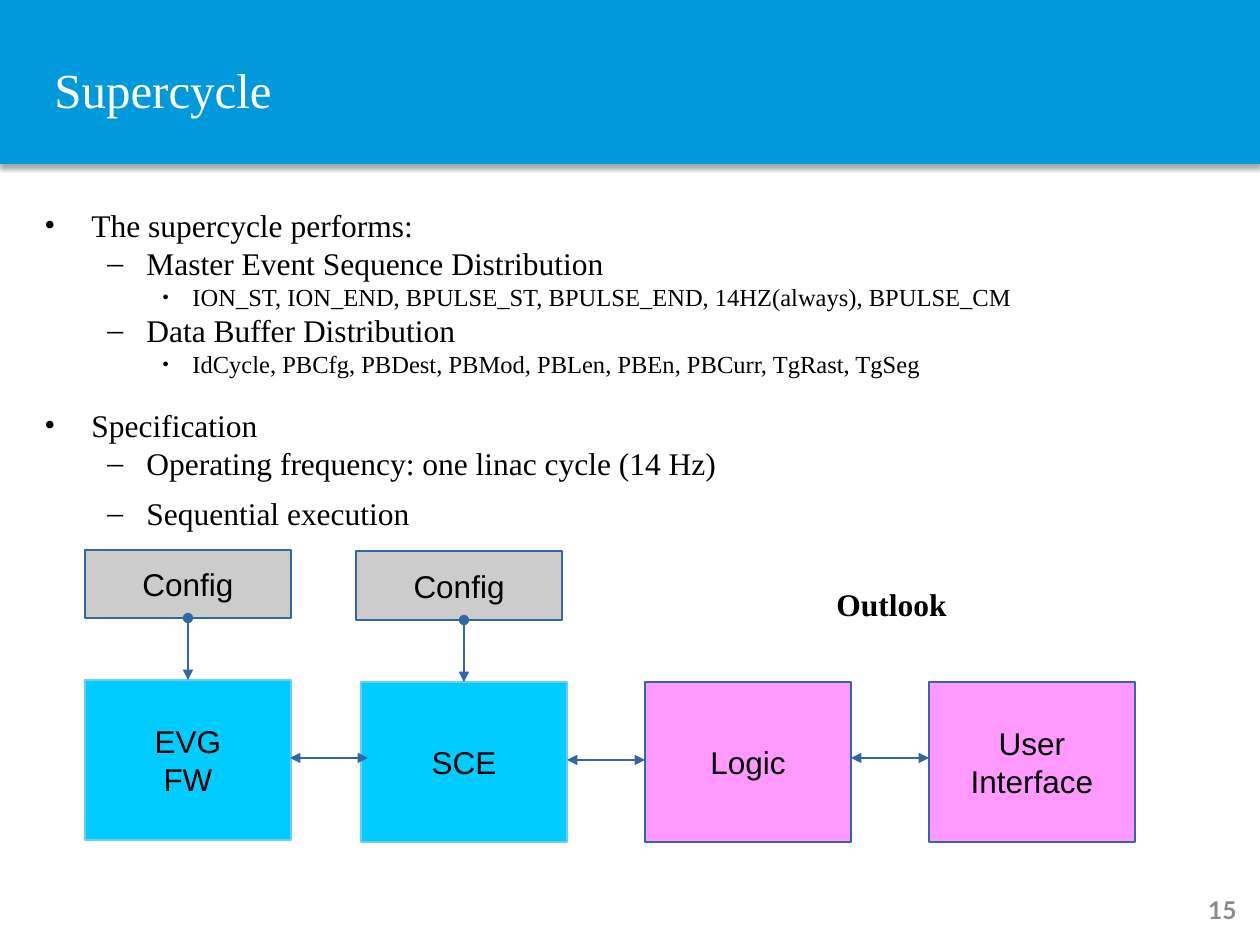
from lxml.etree import SubElement
from pptx import Presentation
from pptx.dml.color import RGBColor
from pptx.enum.shapes import MSO_CONNECTOR, MSO_SHAPE
from pptx.enum.text import MSO_ANCHOR, PP_ALIGN
from pptx.oxml.ns import qn
from pptx.util import Pt

PX = 914400 / 126
SERIF = "Times New Roman"
BLUE = "3465A4"
CYAN = "00CCFF"
PINK = "FF99FF"
GREY = "CCCCCC"

LEVELS = {
    0: ("•", 48, 47, 18, None),
    1: ("–", 103, 39, 18, None),
    4: ("●", 149, 30, 14, 45),
}
LINES = [
    (0, 0, "The supercycle performs:"),
    (1, 0, "Master Event Sequence Distribution"),
    (4, 0, "ION_ST, ION_END, BPULSE_ST, BPULSE_END, 14HZ(always), BPULSE_CM"),
    (1, 0, "Data Buffer Distribution"),
    (4, 0, "IdCycle, PBCfg, PBDest, PBMod, PBLen, PBEn, PBCurr, TgRast, TgSeg"),
    (0, 16, "Specification"),
    (1, 0, "Operating frequency: one linac cycle (14 Hz)"),
    (1, 7, "Sequential execution"),
]


def emu(*sizes):
    return [round(size * PX) for size in sizes]


def tint(code):
    return RGBColor.from_string(code)


def add(node, tag, **attrs):
    return SubElement(node, qn(tag), attrs)


def style(para, size, face, color="000000", bold=False):
    for run in para.runs:
        font = run.font
        font.size = Pt(size)
        font.name = face
        font.bold = bold
        font.color.rgb = tint(color)


def label(slide, area, text, size, face, color="000000", bold=False,
          align=PP_ALIGN.LEFT, anchor=MSO_ANCHOR.MIDDLE):
    frame = slide.shapes.add_textbox(*emu(*area)).text_frame
    frame.word_wrap = True
    frame.vertical_anchor = anchor
    frame.text = text
    para = frame.paragraphs[0]
    para.alignment = align
    style(para, size, face, color, bold)


def rect(slide, area, fill, edge=None):
    shape = slide.shapes.add_shape(MSO_SHAPE.RECTANGLE, *emu(*area))
    shape.shadow.inherit = False
    shape.fill.solid()
    shape.fill.fore_color.rgb = tint(fill)
    if edge:
        shape.line.color.rgb = tint(edge)
        shape.line.width = Pt(0.75)
    else:
        shape.line.fill.background()
    return shape


def block(slide, area, text, fill, edge=BLUE):
    shape = rect(slide, area, fill, edge)
    frame = shape.text_frame
    frame.word_wrap = False
    frame.vertical_anchor = MSO_ANCHOR.MIDDLE
    frame.text = text
    for para in frame.paragraphs:
        para.alignment = PP_ALIGN.CENTER
        style(para, 18, "Arial")
    return shape


def banner(slide):
    shape = rect(slide, (0, 0, 1260, 164), "0099DC")
    effect = shape.element.spPr.find(qn("a:effectLst"))
    shade = add(effect, "a:outerShdw", blurRad=str(Pt(3.1)),
                dist=str(Pt(1.8)), dir="5400000", rotWithShape="0")
    color = add(shade, "a:srgbClr", val="000000")
    add(color, "a:alpha", val="35000")


def arrow(slide, ends, tail="triangle"):
    line = slide.shapes.add_connector(MSO_CONNECTOR.STRAIGHT, *emu(*ends))
    line.line.color.rgb = tint(BLUE)
    line.line.width = Pt(0.75)
    stroke = line.line._get_or_add_ln()
    add(stroke, "a:headEnd", type="triangle")
    add(stroke, "a:tailEnd", type=tail)
    add(line._element.spPr, "a:effectLst")
    return line


def bullet(para, level):
    mark, left, hang, size, scale = LEVELS[level]
    para.level = level
    props = para._p.get_or_add_pPr()
    margin, indent = emu(left, -hang)
    props.set("marL", str(margin))
    props.set("indent", str(indent))
    color = add(props, "a:buClr")
    add(color, "a:srgbClr", val="000000")
    if scale:
        add(props, "a:buSzPct", val=str(scale * 1000))
    add(props, "a:buFont", typeface=SERIF)
    add(props, "a:buChar", char=mark)
    style(para, size, SERIF)


def outline(slide):
    frame = slide.shapes.add_textbox(*emu(31, 200, 1191, 378)).text_frame
    frame.word_wrap = True
    frame.text = "\n".join(text for _, _, text in LINES)
    for para, (level, gap, _) in zip(frame.paragraphs, LINES):
        bullet(para, level)
        para.space_before = Pt(gap)


def diagram(slide):
    wide, tall = 206, 160
    evg = block(slide, (85, 680, wide, tall), "EVG\nFW", CYAN, "66CCFF")
    sce = block(slide, (361, 682, wide, tall), "SCE", CYAN, "66CCFF")
    block(slide, (645, 682, wide, tall), "Logic", PINK)
    block(slide, (929, 682, wide, tall), "User\nInterface", PINK)
    for left, top in ((290, 758), (567, 760), (851, 758)):
        arrow(slide, (left, top, left + 78, top))
    block(slide, (356, 551, wide, 69), "Config", GREY)
    setup = block(slide, (85, 550, wide, 68), "Config", GREY)
    feed = arrow(slide, (464, 682, 464, 620), "oval")
    feed.begin_connect(sce, 0)
    feed = arrow(slide, (188, 680, 188, 618), "oval")
    feed.begin_connect(evg, 0)
    feed.end_connect(setup, 2)


def main():
    deck = Presentation()
    deck.slide_width, deck.slide_height = emu(1260, 945)
    slide = deck.slides.add_slide(deck.slide_layouts[6])
    banner(slide)
    label(slide, (42, 21, 1050, 136), "Supercycle", 28, SERIF, "FFFFFF")
    label(slide, (955, 885, 294, 50), "15", 14, "Lato", "8B8B8B", True,
          PP_ALIGN.RIGHT)
    outline(slide)
    diagram(slide)
    label(slide, (824, 579, 160, 48), "Outlook", 18, SERIF, bold=True,
          anchor=MSO_ANCHOR.TOP)
    deck.save("out.pptx")


if __name__ == "__main__":
    main()
